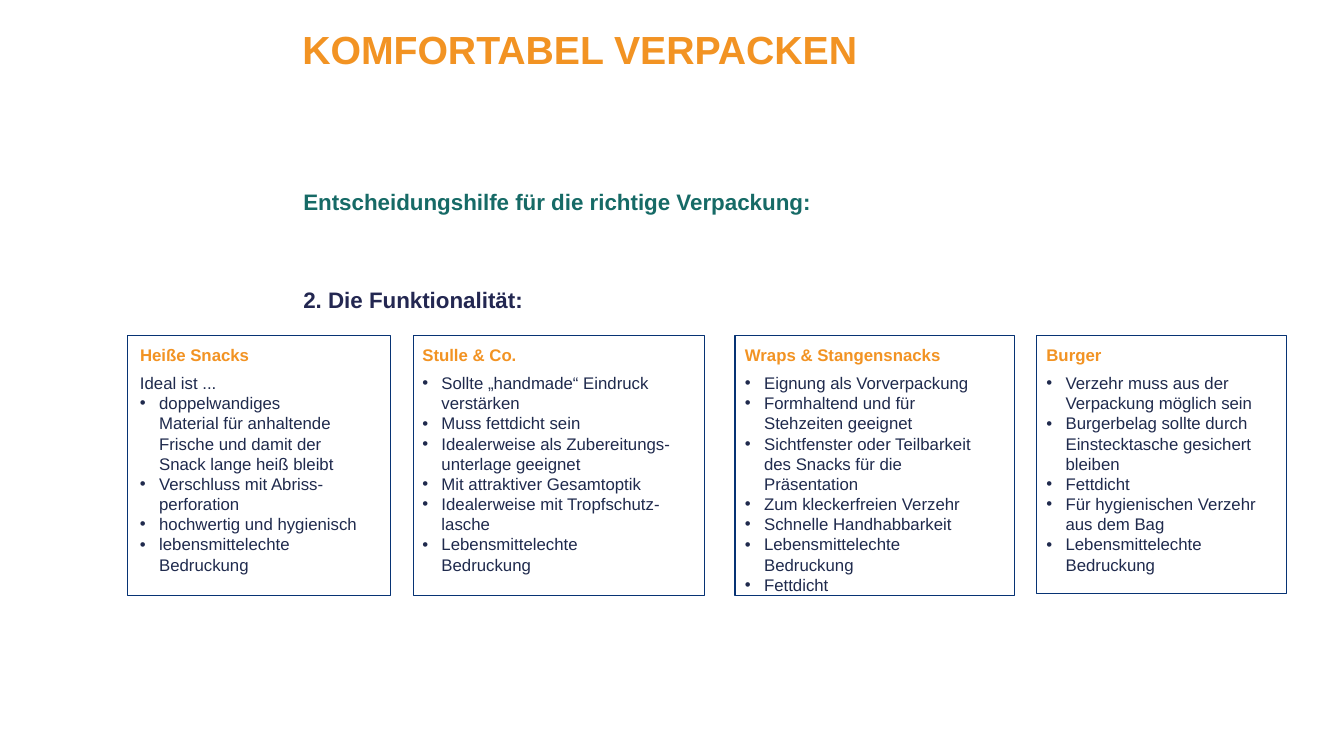
from copy import deepcopy

from lxml import etree
from pptx import Presentation
from pptx.dml.color import RGBColor
from pptx.enum import shapes, text
from pptx.oxml import ns
from pptx.util import Inches, Pt

COLORS = {
    "orange": "F29323",
    "green": "166A66",
    "navy": "232751",
    "body": "1F2A4D",
    "border": "073374",
}
INDENT = 0.19
CARD_TOP, HEADING_TOP, LIST_TOP = 3.33, 3.37, 3.65

CARDS = [
    {
        "heading": "Heiße Snacks", "frame": (1.26, 2.61, 2.58),
        "left": 1.29, "heading_width": 1.29, "list_size": (2.37, 2.12),
        "intro": "Ideal ist ...", "wrap": False,
        "points": [
            "doppelwandiges\nMaterial für anhaltende\nFrische und damit der\nSnack lange heiß bleibt",
            "Verschluss mit Abriss-\nperforation",
            "hochwertig und hygienisch",
            "lebensmittelechte\nBedruckung",
        ],
    },
    {
        "heading": "Stulle & Co.", "frame": (4.1, 2.89, 2.58),
        "left": 4.09, "heading_width": 1.15, "list_size": (2.98, 2.12),
        "points": [
            "Sollte „handmade“ Eindruck\nverstärken",
            "Muss fettdicht sein",
            "Idealerweise als Zubereitungs-\nunterlage geeignet",
            "Mit attraktiver Gesamtoptik",
            "Idealerweise mit Tropfschutz-\nlasche",
            "Lebensmittelechte\nBedruckung",
        ],
    },
    {
        "heading": "Wraps & Stangensnacks", "frame": (7.29, 2.77, 2.58),
        "left": 7.29, "heading_width": 2.16, "list_size": (2.46, 2.32),
        "wrap": False,
        "points": [
            "Eignung als Vorverpackung",
            "Formhaltend und für\nStehzeiten geeignet",
            "Sichtfenster oder Teilbarkeit\ndes Snacks für die\nPräsentation",
            "Zum kleckerfreien Verzehr",
            "Schnelle Handhabbarkeit",
            "Lebensmittelechte\nBedruckung",
            "Fettdicht",
        ],
    },
    {
        "heading": "Burger", "frame": (10.28, 2.48, 2.56),
        "left": 10.28, "heading_width": 0.75, "list_size": (2.59, 2.12),
        "points": [
            "Verzehr muss aus der\nVerpackung möglich sein",
            "Burgerbelag sollte durch\nEinstecktasche gesichert\nbleiben",
            "Fettdicht",
            "Für hygienischen Verzehr\naus dem Bag",
            "Lebensmittelechte Bedruckung",
        ],
    },
]


def add_text_box(slide, left, top, width, height, wrap=True, grow=False,
                 inset_top=0.05, anchor=text.MSO_ANCHOR.TOP):
    box = slide.shapes.add_textbox(*map(Inches, (left, top, width, height)))
    frame = box.text_frame
    frame.word_wrap = wrap
    frame.margin_top = Inches(inset_top)
    frame.vertical_anchor = anchor
    if grow:
        frame.auto_size = text.MSO_AUTO_SIZE.SHAPE_TO_FIT_TEXT
    return frame


def add_bullet(paragraph):
    properties = paragraph._p.get_or_add_pPr()
    properties.set("marL", str(Inches(INDENT)))
    properties.set("indent", str(-Inches(INDENT)))
    font = etree.SubElement(properties, ns.qn("a:buFont"))
    font.set("typeface", "Arial")
    etree.SubElement(properties, ns.qn("a:buChar")).set("char", "•")


def write(frame, content, size=12, color="body", bold=False, bullet=False,
          line_spacing=None):
    paragraph = frame.paragraphs[0]
    if paragraph.runs:
        paragraph = frame.add_paragraph()
    paragraph.text = content
    paragraph.alignment = text.PP_ALIGN.LEFT
    if line_spacing:
        paragraph.line_spacing = line_spacing
    if bullet:
        add_bullet(paragraph)
    for run in paragraph.runs:
        run.font.name = "Arial"
        run.font.size = Pt(size)
        run.font.bold = bold
        run.font.color.rgb = RGBColor.from_string(COLORS[color])
    run_format = paragraph.runs[0]._r.get_or_add_rPr()
    for line_break in paragraph._p.findall(ns.qn("a:br")):
        line_break.append(deepcopy(run_format))


def add_card(slide, heading, frame, left, heading_width, list_size, points,
             intro=None, wrap=True):
    frame_left, width, height = frame
    border = slide.shapes.add_shape(
        shapes.MSO_SHAPE.RECTANGLE,
        *map(Inches, (frame_left, CARD_TOP, width, height)))
    border.shadow.inherit = False
    border.fill.background()
    border.line.color.rgb = RGBColor.from_string(COLORS["border"])
    border.line.width = Pt(0.75)

    heading_frame = add_text_box(slide, left, HEADING_TOP, heading_width, 0.3,
                                 wrap=False, grow=True)
    write(heading_frame, heading, color="orange", bold=True)

    list_frame = add_text_box(slide, left, LIST_TOP, *list_size,
                              wrap=wrap, grow=True)
    if intro:
        write(list_frame, intro)
    for point in points:
        write(list_frame, point, bullet=True)


def main():
    deck = Presentation()
    deck.slide_width, deck.slide_height = Inches(13.33), Inches(7.5)
    slide = deck.slides.add_slide(deck.slide_layouts[6])

    for card in CARDS:
        add_card(slide, **card)

    title = add_text_box(slide, 2.9, -0.03, 8.99, 1.09,
                         anchor=text.MSO_ANCHOR.MIDDLE)
    write(title, "KOMFORTABEL VERPACKEN", size=28, color="orange", bold=True,
          line_spacing=0.9)
    subtitle = add_text_box(slide, 2.91, 1.41, 5.6, 0.94, inset_top=0.46)
    write(subtitle, "Entscheidungshilfe für die richtige Verpackung:",
          size=16, color="green", bold=True)
    section = add_text_box(slide, 2.91, 2.64, 2.43, 0.54, inset_top=0.07)
    write(section, "2. Die Funktionalität:", size=16, color="navy", bold=True,
          line_spacing=1.5)

    deck.save("out.pptx")


if __name__ == "__main__":
    main()
